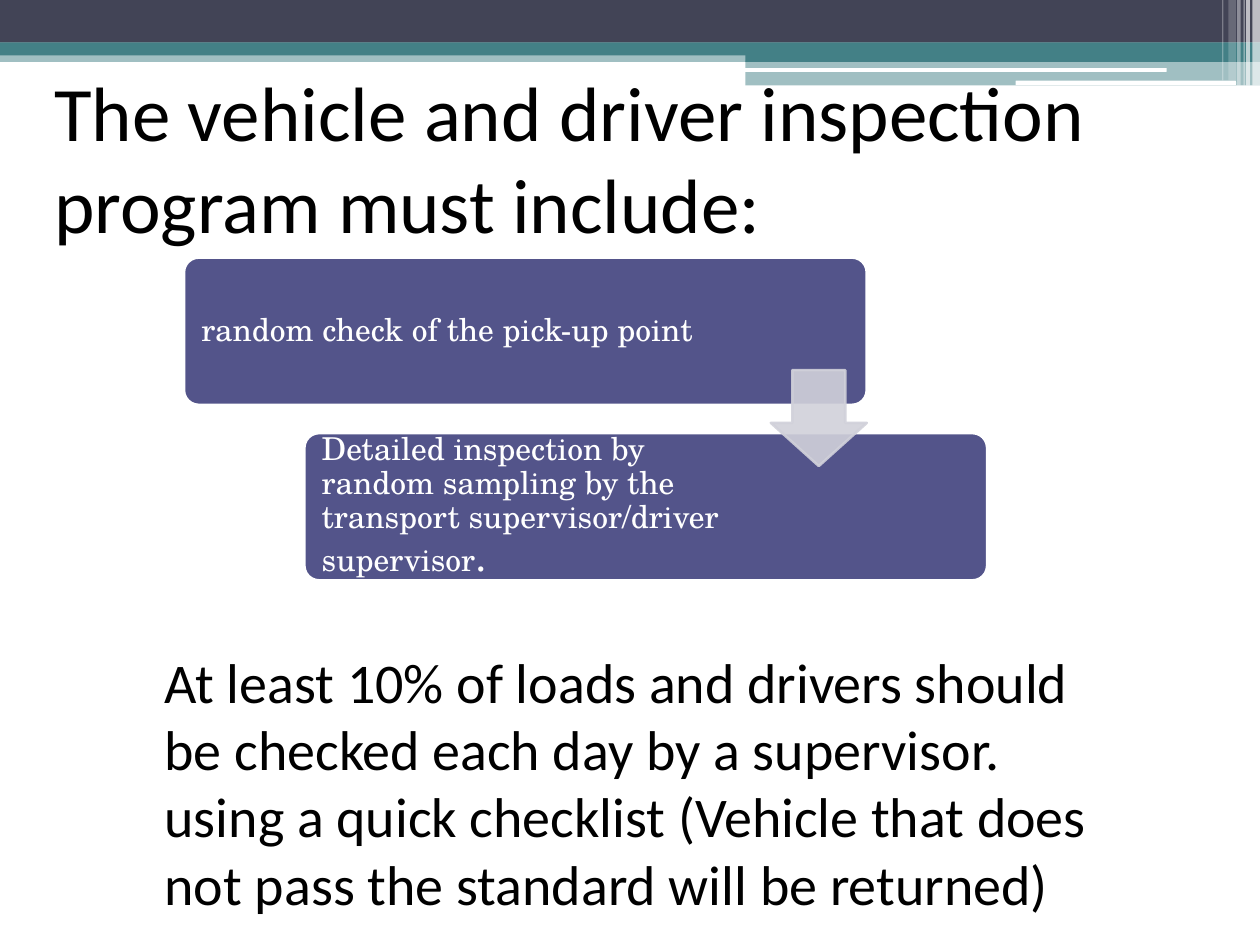
from dataclasses import dataclass

from lxml.etree import SubElement
from pptx import Presentation
from pptx.dml.color import RGBColor
from pptx.enum.shapes import MSO_SHAPE
from pptx.enum.text import MSO_ANCHOR, MSO_AUTO_SIZE, PP_ALIGN
from pptx.oxml.ns import qn
from pptx.util import Pt


@dataclass(frozen=True)
class Theme:
    navy: str = "424456"
    teal: str = "438086"
    white: str = "FFFFFF"
    black: str = "000000"
    step: str = "53548A"
    arrow: str = "D1D1DA"
    body_font: str = "Calibri"
    step_font: str = "TeX Gyre Schola"
    title_size: float = 44
    note_size: float = 32
    step_size: float = 18
    stop_size: float = 24


THEME = Theme()

# left, top, width, height, colour, opacity in percent
BANDS = [
    (0, 28.8, 720, 6.6, THEME.teal, 50),
    (0, 0, 720, 24.4, THEME.navy, 100),
    (0, 24.2, 720, 7.4, THEME.teal, 100),
    (426, 28.2, 294, 7.2, THEME.teal, 100),
    (426, 34.6, 294, 14.2, THEME.teal, 50),
]
HIGHLIGHTS = [(425.5, 38.9, 241.2, 2.2), (580.3, 46.1, 126, 2.6)]
# left, width, height, opacity in percent
STRIPES = [
    (715.7, 4.3, 49, 65),
    (712.1, 2.2, 49, 65),
    (710.6, 0.7, 49, 60),
    (707, 2, 49, 40),
    (702, 4.3, 46, 20),
    (698.4, 0.7, 46, 30),
]
STEP_WIDTH, STEP_HEIGHT = 390.2, 84.2
# left, top, text width, text runs with their sizes
STEPS = [
    (105.1, 147.2, 303.1,
     [("random check of the pick-up point", THEME.step_size)]),
    (173.9, 247.5, 262.1,
     [("Detailed inspection by random sampling by the transport "
       "supervisor/driver supervisor", THEME.step_size),
      (".", THEME.stop_size)]),
]


def set_opacity(fill_format, percent):
    if percent < 100:
        color = fill_format._xPr.find(qn("a:solidFill"))[0]
        SubElement(color, qn("a:alpha"), val=str(percent * 1000))


def add_block(slide, kind, box, color, opacity=100, line=None, adj=()):
    sp = slide.shapes.add_shape(kind, *map(Pt, box))
    sp.shadow.inherit = False
    sp.fill.solid()
    sp.fill.fore_color.rgb = RGBColor.from_string(color)
    set_opacity(sp.fill, opacity)
    if line:
        sp.line.width = Pt(1.5)
        sp.line.color.rgb = RGBColor.from_string(line)
        set_opacity(sp.line.fill, opacity)
    else:
        sp.line.fill.background()
    for i, value in enumerate(adj):
        sp.adjustments[i] = value
    return sp


def format_run(r, font, size, color):
    r.font.name = font
    r.font.size = Pt(size)
    r.font.color.rgb = RGBColor.from_string(color)


def fill_text(sp, box, text, size):
    """Place a title or text box and set its single plain paragraph."""
    sp.left, sp.top, sp.width, sp.height = map(Pt, box)
    tf = sp.text_frame
    tf.text = text
    tf.word_wrap = True
    tf.auto_size = MSO_AUTO_SIZE.NONE
    tf.vertical_anchor = MSO_ANCHOR.TOP
    p = tf.paragraphs[0]
    p.alignment = PP_ALIGN.LEFT
    format_run(p.runs[0], THEME.body_font, size, THEME.black)


def add_header(slide):
    for *box, color, opacity in BANDS:
        add_block(slide, MSO_SHAPE.RECTANGLE, box, color, opacity)
    for box in HIGHLIGHTS:
        add_block(slide, MSO_SHAPE.ROUNDED_RECTANGLE, box, THEME.white)
    for left, width, height, opacity in STRIPES:
        add_block(slide, MSO_SHAPE.RECTANGLE, (left, 0, width, height),
                  THEME.white, opacity)


def add_step(slide, left, top, text_width, runs):
    """Add a rounded step whose text keeps clear of the right-hand side."""
    sp = add_block(slide, MSO_SHAPE.ROUNDED_RECTANGLE,
                   (left, top, STEP_WIDTH, STEP_HEIGHT),
                   THEME.step, line=THEME.white, adj=[0.1])
    tf = sp.text_frame
    tf.word_wrap = True
    tf.vertical_anchor = MSO_ANCHOR.MIDDLE
    tf.margin_left = Pt(7.5)
    tf.margin_right = Pt(STEP_WIDTH - text_width + 2.5)
    tf.margin_top = tf.margin_bottom = Pt(7.5)
    p = tf.paragraphs[0]
    p.alignment = PP_ALIGN.LEFT
    p.line_spacing = 0.9
    for text, size in runs:
        r = p.add_run()
        r.text = text
        format_run(r, THEME.step_font, size, THEME.white)


def main():
    prs = Presentation()
    prs.slide_width, prs.slide_height = Pt(720), Pt(540)
    slide = prs.slides.add_slide(prs.slide_layouts[5])

    add_header(slide)
    for step in STEPS:
        add_step(slide, *step)
    add_block(slide, MSO_SHAPE.DOWN_ARROW, (440.5, 211.5, 54.8, 54.8),
              THEME.arrow, 90, line=THEME.arrow, adj=[0.55, 0.45])

    fill_text(slide.shapes.title, (23.8, 33.1, 681.8, 113.8),
              "The vehicle and driver inspection program must include:",
              THEME.title_size)
    note_box = (87, 366.5, 556, 162.7)
    note = slide.shapes.add_textbox(*map(Pt, note_box))
    fill_text(note, note_box,
              "At least 10% of loads and drivers should be checked each day "
              "by a supervisor. using a quick checklist (Vehicle that does "
              "not pass the standard will be returned)",
              THEME.note_size)
    prs.save("out.pptx")


if __name__ == "__main__":
    main()
